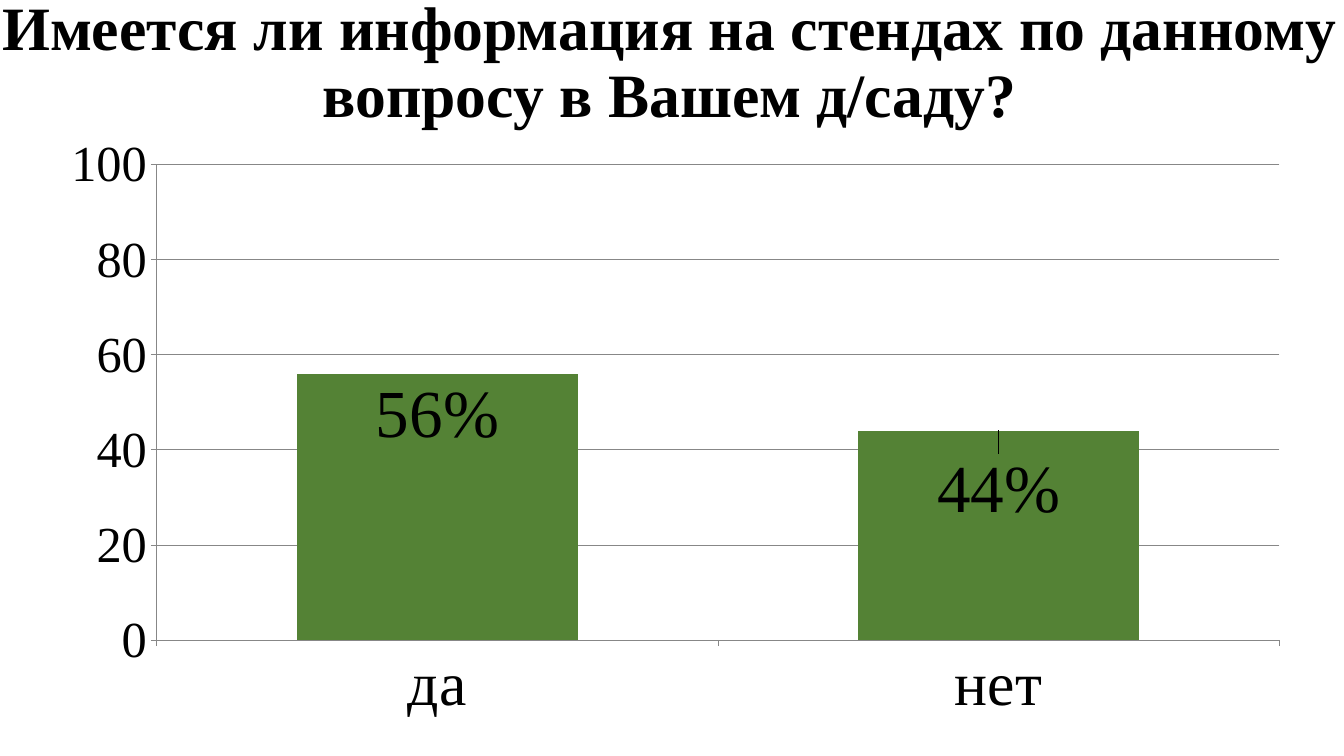
from lxml.etree import SubElement
from pptx import Presentation
from pptx.chart.data import CategoryChartData
from pptx.dml.color import RGBColor
from pptx.enum.chart import XL_CHART_TYPE, XL_LABEL_POSITION, XL_TICK_MARK
from pptx.enum.text import MSO_ANCHOR, PP_ALIGN
from pptx.oxml import parse_xml
from pptx.oxml.ns import nsdecls, qn
from pptx.util import Inches, Pt

# Content
TITLE = "Имеется ли информация на стендах по данному вопросу в Вашем д/саду?"
ANSWERS = {"да": 56, "нет": 44}

# Look
FACE = "Times New Roman"
BLACK = RGBColor(0x00, 0x00, 0x00)
GREEN = RGBColor(0x54, 0x82, 0x35)
GRAY = RGBColor(0x87, 0x87, 0x87)

# Places: left, top, width, height in inches; plot as shares of the chart
HEAD = (-0.08, -0.09, 13.45, 1.45)
GRAPH = (0.43, 1.27, 12.51, 6.05)
PLOT = {"x": 0.09, "y": 0.06, "w": 0.89, "h": 0.78}
DROP = {"x": 0, "y": 0.03}  # shift of the last label


def style(font, size, bold=False):
    font.name, font.size, font.bold = FACE, Pt(size), bold
    font.color.rgb = BLACK


def write(frame, text, size=44, bold=False, space=None):
    para = frame.paragraphs[0]
    para.alignment, para.line_spacing = PP_ALIGN.CENTER, space
    run = para.add_run()
    run.text = text
    style(run.font, size, bold)


def layout(shares, modes):
    root = parse_xml(f"<c:layout {nsdecls('c')}/>")
    manual = SubElement(root, qn("c:manualLayout"))
    for tag, val in {**modes, **shares}.items():
        SubElement(manual, qn(f"c:{tag}")).set("val", str(val))
    return root


def add_title(slide):
    frame = slide.shapes.add_textbox(*map(Inches, HEAD)).text_frame
    frame.word_wrap = True
    frame.vertical_anchor = MSO_ANCHOR.MIDDLE
    write(frame, TITLE, bold=True, space=0.9)


def add_graph(slide):
    data = CategoryChartData()
    data.categories = list(ANSWERS)
    data.add_series("Series 1", list(ANSWERS.values()))
    chart = slide.shapes.add_chart(
        XL_CHART_TYPE.COLUMN_CLUSTERED, *map(Inches, GRAPH), data).chart
    chart.has_legend = chart.has_title = False
    style(chart.font, 36)

    # Axes
    rows, cols = chart.value_axis, chart.category_axis
    rows.minimum_scale, rows.maximum_scale, rows.major_unit = 0, 100, 20
    rows.has_major_gridlines = True
    for axis, size in ((rows, 36), (cols, 44)):
        axis.major_tick_mark = XL_TICK_MARK.OUTSIDE
        style(axis.tick_labels.font, size)
    for item in (rows, cols, rows.major_gridlines):
        item.format.line.color.rgb = GRAY
        item.format.line.width = Pt(0.75)

    # Bars and their labels
    plot = chart.plots[0]
    plot.gap_width, plot.vary_by_categories = 100, False
    bars = plot.series[0]
    bars.format.fill.solid()
    bars.format.fill.fore_color.rgb = GREEN
    for spot, val in enumerate(ANSWERS.values()):
        label = bars.points[spot].data_label
        write(label.text_frame, f"{val}%", size=48)
        label.position = XL_LABEL_POSITION.INSIDE_END

    # Manual layout of the plot and the last label
    area = plot._element.getparent()
    for old in area.findall(qn("c:layout")):
        area.remove(old)
    area.insert(0, layout(PLOT, {
        "layoutTarget": "inner", "xMode": "edge", "yMode": "edge"}))
    area.findall(".//" + qn("c:dLbl"))[-1].insert(1, layout(DROP, {}))


def main():
    deck = Presentation()
    deck.slide_width, deck.slide_height = Inches(13.33), Inches(7.5)
    slide = deck.slides.add_slide(deck.slide_layouts[6])
    add_graph(slide)
    add_title(slide)
    deck.save("out.pptx")


if __name__ == "__main__":
    main()
